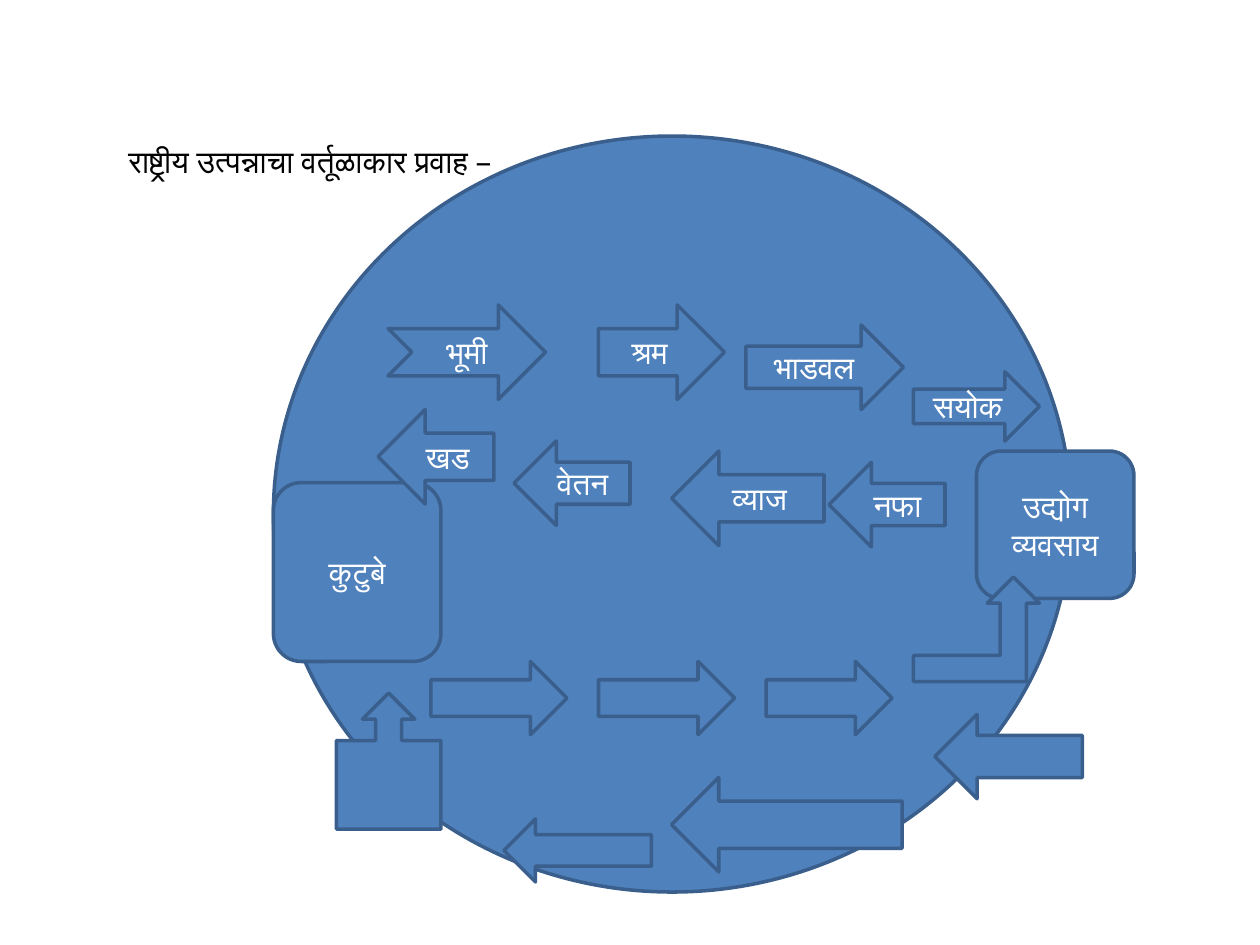
"""Build a slide showing the circular flow of national income."""
from pptx import Presentation
from pptx.dml.color import RGBColor
from pptx.enum.shapes import MSO_SHAPE
from pptx.enum.text import MSO_ANCHOR, PP_ALIGN
from pptx.util import Inches, Pt

BLUE = RGBColor(0x4F, 0x81, 0xBD)
EDGE = RGBColor(0x3A, 0x5F, 0x8C)
WHITE = RGBColor(0xFF, 0xFF, 0xFF)
BLACK = RGBColor(0x00, 0x00, 0x00)
OVAL = MSO_SHAPE.OVAL
ROUND = MSO_SHAPE.ROUNDED_RECTANGLE
NOTCH = MSO_SHAPE.NOTCHED_RIGHT_ARROW
RIGHT = MSO_SHAPE.RIGHT_ARROW
LEFT = MSO_SHAPE.LEFT_ARROW
BENT = MSO_SHAPE.BENT_UP_ARROW
CALLOUT = MSO_SHAPE.UP_ARROW_CALLOUT
MIDDLE = MSO_ANCHOR.MIDDLE
CENTER = PP_ALIGN.CENTER


def write(shape, text, color):
    frame = shape.text_frame
    frame.word_wrap = True
    frame.text = text
    for run in frame.paragraphs[0].runs:
        run.font.name = "Calibri"
        run.font.size = Pt(18)
        run.font.color.rgb = color


def draw(kind, left, top, width, height, text=""):
    shape = slide.shapes.add_shape(
        kind, Inches(left), Inches(top), Inches(width), Inches(height))
    shape.shadow.inherit = False
    shape.fill.solid()
    shape.fill.fore_color.rgb = BLUE
    shape.line.color.rgb = EDGE
    shape.line.width = Pt(2)
    if text:
        write(shape, text, WHITE)
        shape.text_frame.vertical_anchor = MIDDLE
        shape.text_frame.paragraphs[0].alignment = CENTER


deck = Presentation()
deck.slide_width = Inches(10)
deck.slide_height = Inches(7.5)
slide = deck.slides.add_slide(deck.slide_layouts[6])

title = slide.shapes.add_textbox(
    Inches(0.92), Inches(1.08), Inches(9.42), Inches(3.74))
write(title, "राष्ट्रीय उत्पन्नाचा वर्तूळाकार प्रवाह –", BLACK)

draw(OVAL, 2.17, 1.08, 6.33, 6)
draw(ROUND, 2.17, 3.83, 1.33, 1.42, "कुटुबे")
draw(ROUND, 7.75, 3.58, 1.25, 1.17, "उद्योग व्यवसाय")

factors = [
    (NOTCH, 3.08, 2.42, 1.25, 0.75, "भूमी"),
    (RIGHT, 4.75, 2.42, 1, 0.75, "श्रम"),
    (RIGHT, 5.92, 2.58, 1.25, 0.67, "भाडवल"),
    (RIGHT, 7.25, 2.95, 1, 0.55, "सयोक"),
]
rewards = [
    (LEFT, 6.58, 3.67, 0.92, 0.67, "नफा"),
    (LEFT, 5.33, 3.58, 1.21, 0.75, "व्याज"),
    (LEFT, 4.08, 3.5, 0.92, 0.67, "वेतन"),
    (LEFT, 3, 3.25, 0.92, 0.75, "खड"),
]
for arrow in factors + rewards:
    draw(*arrow)

for step, width in enumerate((1.08, 1.08, 1)):
    draw(RIGHT, 3.42 + step * 1.33, 5.25, width, 0.58)
draw(BENT, 7.25, 4.58, 1, 0.83)

returns = [
    (7.42, 5.67, 1.17, 0.67),
    (5.33, 6.17, 1.83, 0.75),
    (4, 6.5, 1.17, 0.5),
]
for place in returns:
    draw(LEFT, *place)
draw(CALLOUT, 2.67, 5.5, 0.83, 1.08)

deck.save("out.pptx")
